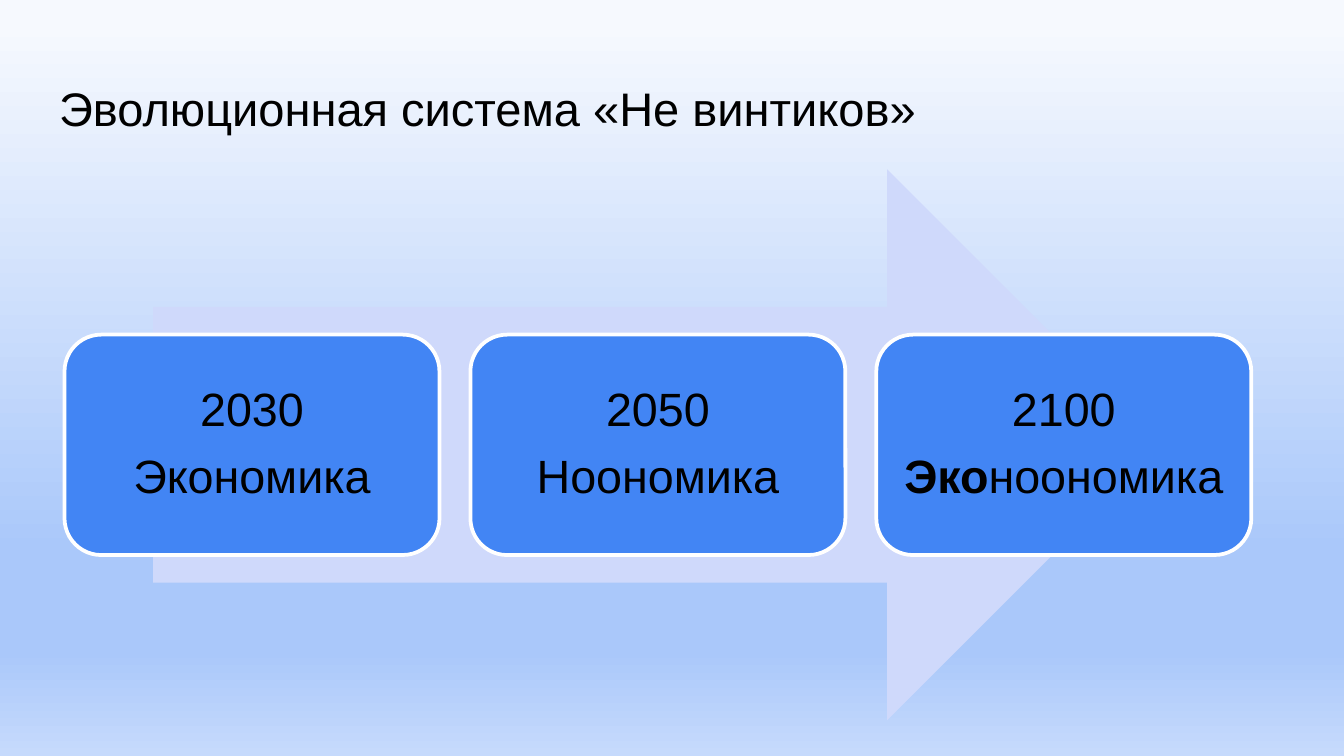
from lxml import etree
from pptx import Presentation
from pptx.dml.color import RGBColor
from pptx.enum.shapes import MSO_SHAPE
from pptx.enum.text import MSO_ANCHOR, MSO_AUTO_SIZE, PP_ALIGN
from pptx.oxml.ns import qn
from pptx.util import Inches, Pt

ARROW = MSO_SHAPE.RIGHT_ARROW
ROUNDED = MSO_SHAPE.ROUNDED_RECTANGLE
TOP, MIDDLE = MSO_ANCHOR.TOP, MSO_ANCHOR.MIDDLE
LEFT, CENTER = PP_ALIGN.LEFT, PP_ALIGN.CENTER
NO_AUTOFIT = MSO_AUTO_SIZE.NONE

COLORS = {
    "text": "000000",
    "arrow": "CFD9FB",
    "card": "4285F4",
    "border": "FFFFFF",
}
BACKGROUND_STOPS = [(3, "F6F9FE"), (73, "AAC8FA"), (86, "AAC8FA"), (100, "C6DAFC")]
FONT = "Arial"

# Widescreen slide, 16:9 (inches)
SLIDE_WIDTH = 10
SLIDE_HEIGHT = SLIDE_WIDTH * 9 / 16

# Card row: left edge, top, column pitch, card size (inches)
ROW_LEFT, ROW_TOP, PITCH = 0.48, 2.49, 3.02
CARD_WIDTH, CARD_HEIGHT = 2.79, 1.64

# Each stage has a year and a name made of (text, bold) runs
STAGES = [
    ("2030", [("Экономика", False)]),
    ("2050", [("Ноономика", False)]),
    ("2100", [("Эко", True), ("ноономика", False)]),
]


def color(name):
    return RGBColor.from_string(COLORS[name])


def set_background(slide):
    fill = slide.background.fill
    fill.gradient()
    fill.gradient_angle = 270  # counter-clockwise, so top to bottom
    stops = slide.background._cSld.find(".//" + qn("a:gsLst"))
    for stop in list(stops):
        stops.remove(stop)
    for percent, value in BACKGROUND_STOPS:
        stop = etree.SubElement(stops, qn("a:gs"), pos=str(percent * 1000))
        etree.SubElement(stop, qn("a:srgbClr"), val=value)


def prepare_frame(frame, anchor):
    frame.word_wrap = True
    frame.auto_size = NO_AUTOFIT
    frame.vertical_anchor = anchor
    frame.margin_left = frame.margin_right = Inches(0.1)
    frame.margin_top = frame.margin_bottom = Inches(0.1)


def add_run(paragraph, text, size, bold=False):
    run = paragraph.add_run()
    run.text = text
    run.font.name = FONT
    run.font.size = Pt(size)
    run.font.bold = bold
    run.font.color.rgb = color("text")


def add_title(slide, text):
    title = slide.shapes.title
    title.left, title.top = Inches(0.34), Inches(0.49)
    title.width, title.height = Inches(9.32), Inches(0.63)
    prepare_frame(title.text_frame, TOP)
    paragraph = title.text_frame.paragraphs[0]
    paragraph.alignment = LEFT
    paragraph.line_spacing = 1.0
    add_run(paragraph, text, 25.2)


def add_filled_shape(slide, kind, box, fill):
    shape = slide.shapes.add_shape(kind, *[Inches(length) for length in box])
    shape.shadow.inherit = False
    shape.fill.solid()
    shape.fill.fore_color.rgb = color(fill)
    shape.line.fill.background()
    return shape


def add_stage(slide, column, year, name_runs):
    box = (ROW_LEFT + column * PITCH, ROW_TOP, CARD_WIDTH, CARD_HEIGHT)
    card = add_filled_shape(slide, ROUNDED, box, "card")
    card.line.color.rgb = color("border")
    card.line.width = Pt(2)
    frame = card.text_frame
    prepare_frame(frame, MIDDLE)
    lines = [[(year, False)], name_runs]
    for index, runs in enumerate(lines):
        paragraph = frame.add_paragraph() if index else frame.paragraphs[0]
        paragraph.alignment = CENTER
        paragraph.line_spacing = 0.9
        paragraph.space_after = Pt(9)
        for text, bold in runs:
            add_run(paragraph, text, 25, bold)


def main():
    presentation = Presentation()
    presentation.slide_width = Inches(SLIDE_WIDTH)
    presentation.slide_height = Inches(SLIDE_HEIGHT)
    slide = presentation.slides.add_slide(presentation.slide_layouts[5])

    set_background(slide)
    add_title(slide, "Эволюционная система «Не винтиков»")

    # Arrow of time behind the stages
    add_filled_shape(slide, ARROW, (1.14, 1.26, 7.51, 4.1), "arrow")
    for column, (year, name_runs) in enumerate(STAGES):
        add_stage(slide, column, year, name_runs)

    presentation.save("out.pptx")


if __name__ == "__main__":
    main()
